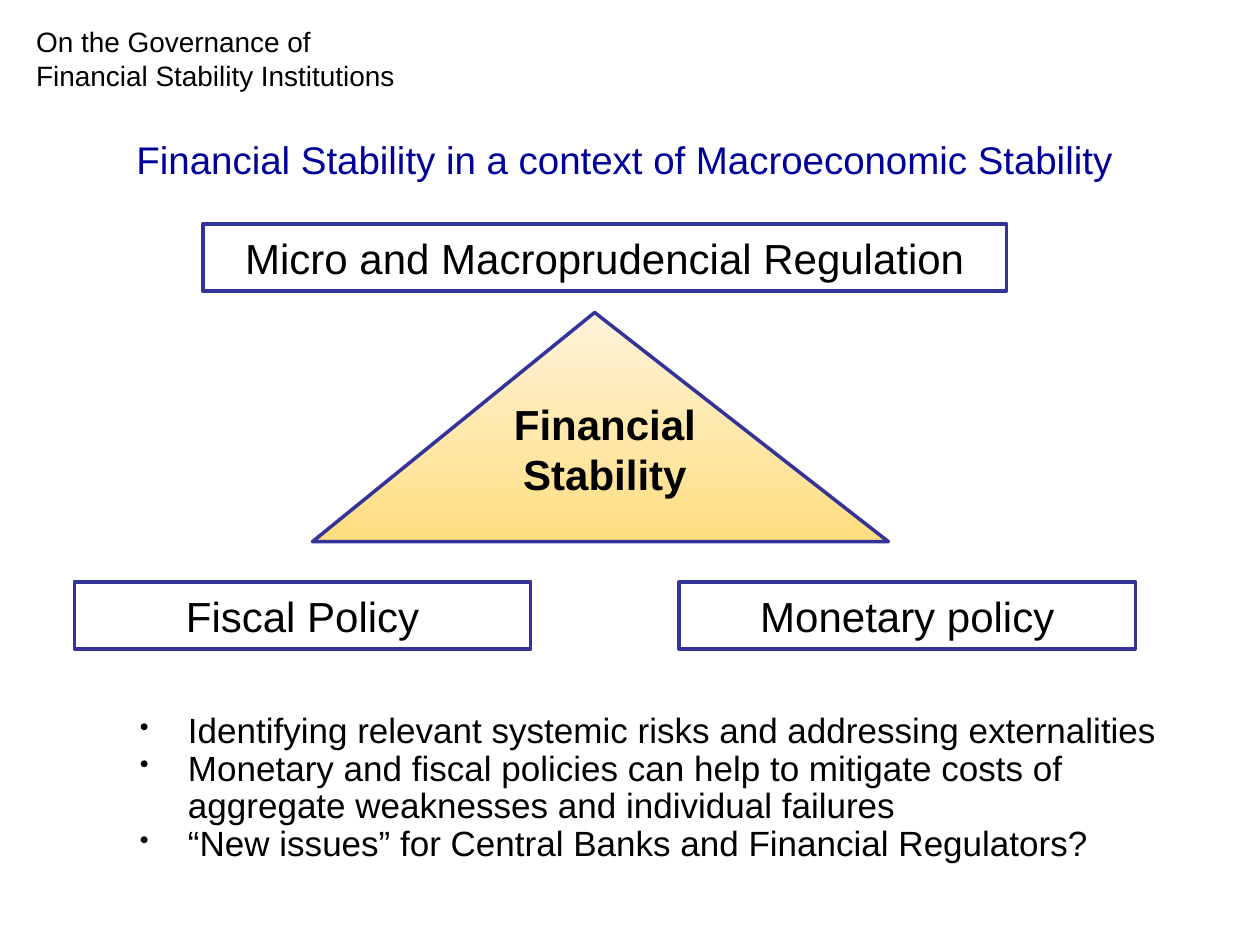
import pptx
import pptx.dml.color
import pptx.enum.shapes
import pptx.enum.text
import pptx.oxml
import pptx.oxml.ns
import pptx.util

Cm, Pt = pptx.util.Cm, pptx.util.Pt
SHAPES = pptx.enum.shapes.MSO_SHAPE
ALIGN = pptx.enum.text.PP_ALIGN
ANCHOR = pptx.enum.text.MSO_ANCHOR


def rgb(value):
    return pptx.dml.color.RGBColor.from_string(value)


def add_bullet(p, indent, hanging):
    """Give the paragraph a 75 % round bullet with a hanging indent."""
    pPr = p._p.get_or_add_pPr()
    pPr.set("marL", str(Cm(indent)))
    pPr.set("indent", str(-Cm(hanging)))
    for xml in ('a:buSzPct %s val="75000"', 'a:buChar %s char="•"'):
        pPr.append(pptx.oxml.parse_xml(f"<{xml}/>" % pptx.oxml.ns.nsdecls("a")))


def write(tf, text, size=24, color="000000", bold=False, align=ALIGN.LEFT,
          spacing=None, bullets=False, wrap=True, anchor=ANCHOR.TOP):
    """Fill a text frame, one paragraph per line of text."""
    tf.word_wrap = wrap
    tf.vertical_anchor = anchor
    tf.auto_size = pptx.enum.text.MSO_AUTO_SIZE.NONE
    tf.text = text
    for p in tf.paragraphs:
        p.alignment = align
        p.space_before = Pt(0)
        if spacing:
            p.line_spacing = spacing
        if bullets:
            add_bullet(p, 2.24, 0.97)
        for r in p.runs:
            r.font.name = "Arial"
            r.font.size = Pt(size)
            r.font.bold = bold
            r.font.color.rgb = rgb(color)


class Deck:
    line_color = "333399"
    line_width = 2
    title_color = "000099"

    def __init__(self, width, height):
        self.prs = pptx.Presentation()
        self.prs.slide_width, self.prs.slide_height = Cm(width), Cm(height)
        self.s = None

    def add_slide(self):
        self.s = self.prs.slides.add_slide(self.prs.slide_layouts[5])

    def title(self, text, x, y, w, h):
        sp = self.s.shapes.title
        sp.left, sp.top, sp.width, sp.height = Cm(x), Cm(y), Cm(w), Cm(h)
        write(sp.text_frame, text, size=22, color=self.title_color,
              align=ALIGN.CENTER, spacing=0.9)

    def text(self, text, x, y, w, h, **fmt):
        sp = self.s.shapes.add_textbox(Cm(x), Cm(y), Cm(w), Cm(h))
        write(sp.text_frame, text, **fmt)

    def outlined(self, kind, x, y, w, h):
        sp = self.s.shapes.add_shape(kind, Cm(x), Cm(y), Cm(w), Cm(h))
        sp.shadow.inherit = False
        sp.line.color.rgb = rgb(self.line_color)
        sp.line.width = Pt(self.line_width)
        return sp

    def box(self, text, x, y, w, h=1.35):
        sp = self.outlined(SHAPES.RECTANGLE, x, y, w, h)
        sp.fill.background()
        write(sp.text_frame, text, align=ALIGN.CENTER, anchor=ANCHOR.MIDDLE)

    def triangle(self, x, y, w, h, apex, bottom, top):
        sp = self.outlined(SHAPES.ISOSCELES_TRIANGLE, x, y, w, h)
        sp.adjustments[0] = apex
        sp.fill.gradient()
        sp.fill.gradient_angle = 90
        for stop, color in zip(sp.fill.gradient_stops, (bottom, top)):
            stop.color.rgb = rgb(color)


def main():
    deck = Deck(25.4, 19.05)
    deck.add_slide()
    deck.title("Financial Stability in a context of Macroeconomic Stability",
               0.69, 2.72, 23.8, 1.09)
    deck.triangle(6.3, 6.3, 11.61, 4.62, apex=0.49, bottom="FFDE80", top="FFF3DA")
    deck.box("Micro and Macroprudencial Regulation", 4.09, 4.52, 16.2)
    for policy, x in (("Monetary policy", 13.69), ("Fiscal Policy", 1.5)):
        deck.box(policy, x, 11.73, 9.2)
    deck.text("Financial\nStability", 10.11, 7.9, 4.17, 2.29,
              bold=True, align=ALIGN.CENTER, wrap=False)
    deck.text("Identifying relevant systemic risks and addressing externalities\n"
              "Monetary and fiscal policies can help to mitigate costs of "
              "aggregate weaknesses and individual failures\n"
              "“New issues” for Central Banks and Financial Regulators?",
              1.3, 14.25, 22.4, 3.35, size=20, spacing=0.9, bullets=True)
    deck.text("On the Governance of Financial Stability Institutions",
              0.48, 0.38, 8.31, 1.63, size=16)
    deck.prs.save("out.pptx")


if __name__ == "__main__":
    main()
